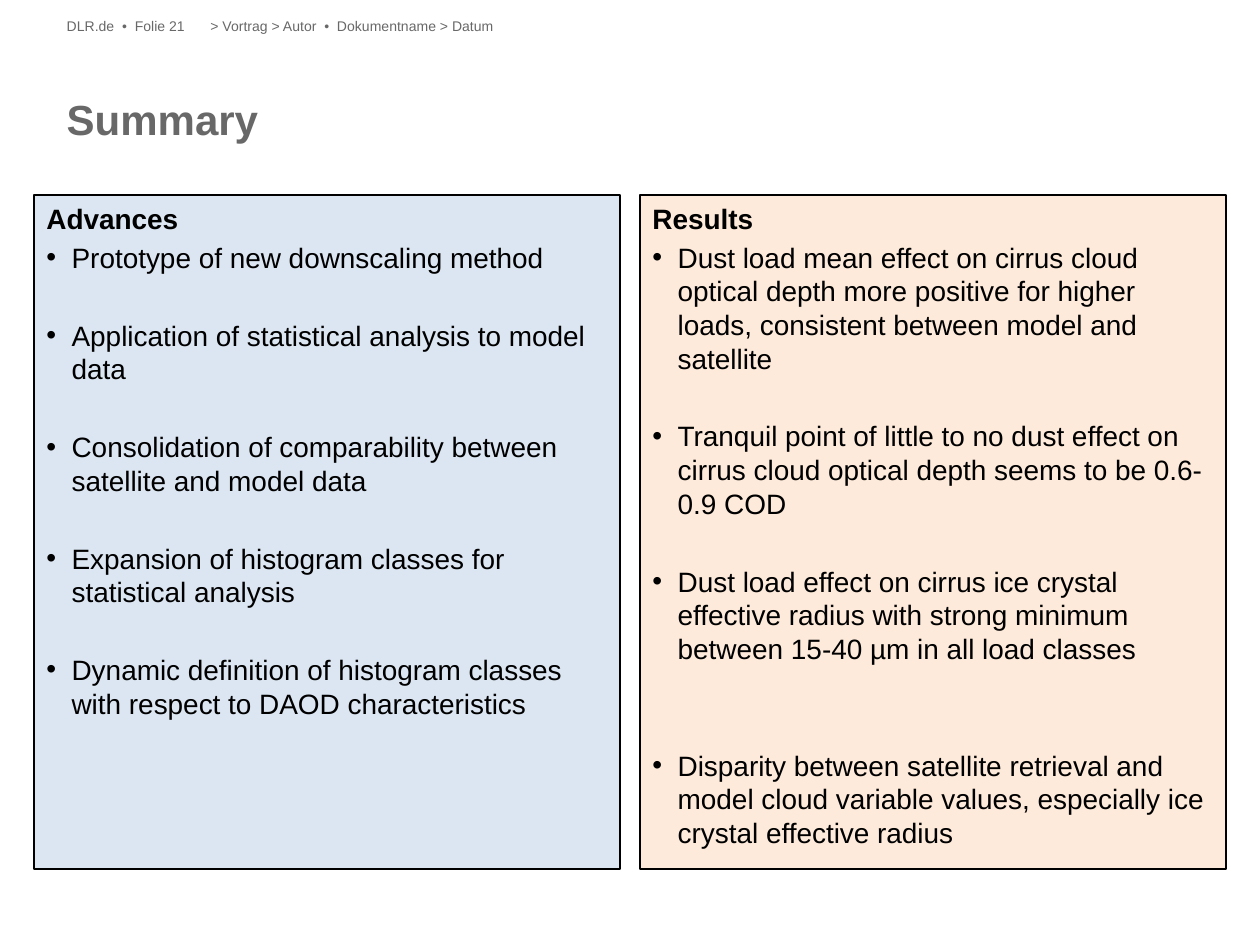
from lxml import etree
from pptx import Presentation
from pptx.dml.color import RGBColor
from pptx.enum.shapes import MSO_SHAPE
from pptx.enum.text import MSO_ANCHOR, PP_ALIGN
from pptx.oxml.ns import qn
from pptx.util import Inches, Pt

GRAY = RGBColor(0x68, 0x68, 0x68)
BLACK = RGBColor(0x00, 0x00, 0x00)
PALE_BLUE = RGBColor(0xDC, 0xE6, 0xF2)
PALE_ORANGE = RGBColor(0xFD, 0xEA, 0xDA)
FONT = "Arial"

# Content: text, left, top, width, height, size, bold
LABELS = [
    ("DLR.de  •  Folie 21", 0.53, 0.14, 1.14, 0.16, 8, False),
    ("> Vortrag > Autor  •  Dokumentname > Datum", 1.67, 0.14, 7.8, 0.16, 8, False),
    ("Summary", 0.53, 0.74, 8.94, 0.81, 24, True),
]

# Each point: text, number of free lines above it
PANELS = [
    ("Advances", PALE_BLUE, [
        ("Prototype of new downscaling method", 0),
        ("Application of statistical analysis to model data", 1),
        ("Consolidation of comparability between satellite and model data", 1),
        ("Expansion of histogram classes for statistical analysis", 1),
        ("Dynamic definition of histogram classes with respect to DAOD characteristics", 1),
    ]),
    ("Results", PALE_ORANGE, [
        ("Dust load mean effect on cirrus cloud optical depth more positive for higher "
         "loads, consistent between model and satellite", 0),
        ("Tranquil point of little to no dust effect on cirrus cloud optical depth "
         "seems to be 0.6-0.9 COD", 1),
        ("Dust load effect on cirrus ice crystal effective radius with strong minimum "
         "between 15-40 µm in all load classes", 1),
        ("Disparity between satellite retrieval and model cloud variable values, "
         "especially ice crystal effective radius", 2),
    ]),
]

# Panel geometry in inches, text spacing in points
PANEL_LEFT, PANEL_TOP, PANEL_WIDTH, PANEL_HEIGHT = 0.27, 1.55, 4.65, 5.35
PANEL_GAP = 0.16
BULLET_INDENT = 0.2
BODY_SIZE = 16
SPACE_BEFORE = 3
FREE_LINE = 22.3


def add_text(paragraph, text, size, color, bold=False):
    paragraph.alignment = PP_ALIGN.LEFT
    run = paragraph.add_run()
    run.text = text
    run.font.name = FONT
    run.font.size = Pt(size)
    run.font.bold = bold
    run.font.color.rgb = color


def add_bullet(paragraph):
    properties = paragraph._p.get_or_add_pPr()
    properties.set("marL", str(Inches(BULLET_INDENT)))
    properties.set("indent", str(-Inches(BULLET_INDENT)))
    etree.SubElement(properties, qn("a:buFont")).set("typeface", FONT)
    etree.SubElement(properties, qn("a:buChar")).set("char", "•")


def add_label(slide, text, left, top, width, height, size, bold):
    box = slide.shapes.add_textbox(Inches(left), Inches(top), Inches(width), Inches(height))
    frame = box.text_frame
    frame.word_wrap = True
    frame.margin_left = frame.margin_right = frame.margin_top = frame.margin_bottom = 0
    add_text(frame.paragraphs[0], text, size, GRAY, bold)


def add_panel(slide, left, heading, fill_color, points):
    panel = slide.shapes.add_shape(
        MSO_SHAPE.RECTANGLE, Inches(left), Inches(PANEL_TOP),
        Inches(PANEL_WIDTH), Inches(PANEL_HEIGHT))
    panel.shadow.inherit = False
    panel.fill.solid()
    panel.fill.fore_color.rgb = fill_color
    panel.line.color.rgb = BLACK
    panel.line.width = Pt(1)

    frame = panel.text_frame
    frame.word_wrap = True
    frame.vertical_anchor = MSO_ANCHOR.TOP
    add_text(frame.paragraphs[0], heading, BODY_SIZE, BLACK, bold=True)
    for text, free_lines in points:
        paragraph = frame.add_paragraph()
        add_bullet(paragraph)
        paragraph.space_before = Pt(SPACE_BEFORE + free_lines * FREE_LINE)
        add_text(paragraph, text, BODY_SIZE, BLACK)


def main():
    presentation = Presentation()
    presentation.slide_width = Inches(10)
    presentation.slide_height = Inches(7.5)
    slide = presentation.slides.add_slide(presentation.slide_layouts[6])

    # Header line and title
    for label in LABELS:
        add_label(slide, *label)

    # Two panels side by side
    for column, panel in enumerate(PANELS):
        add_panel(slide, PANEL_LEFT + column * (PANEL_WIDTH + PANEL_GAP), *panel)

    presentation.save("out.pptx")


if __name__ == "__main__":
    main()
